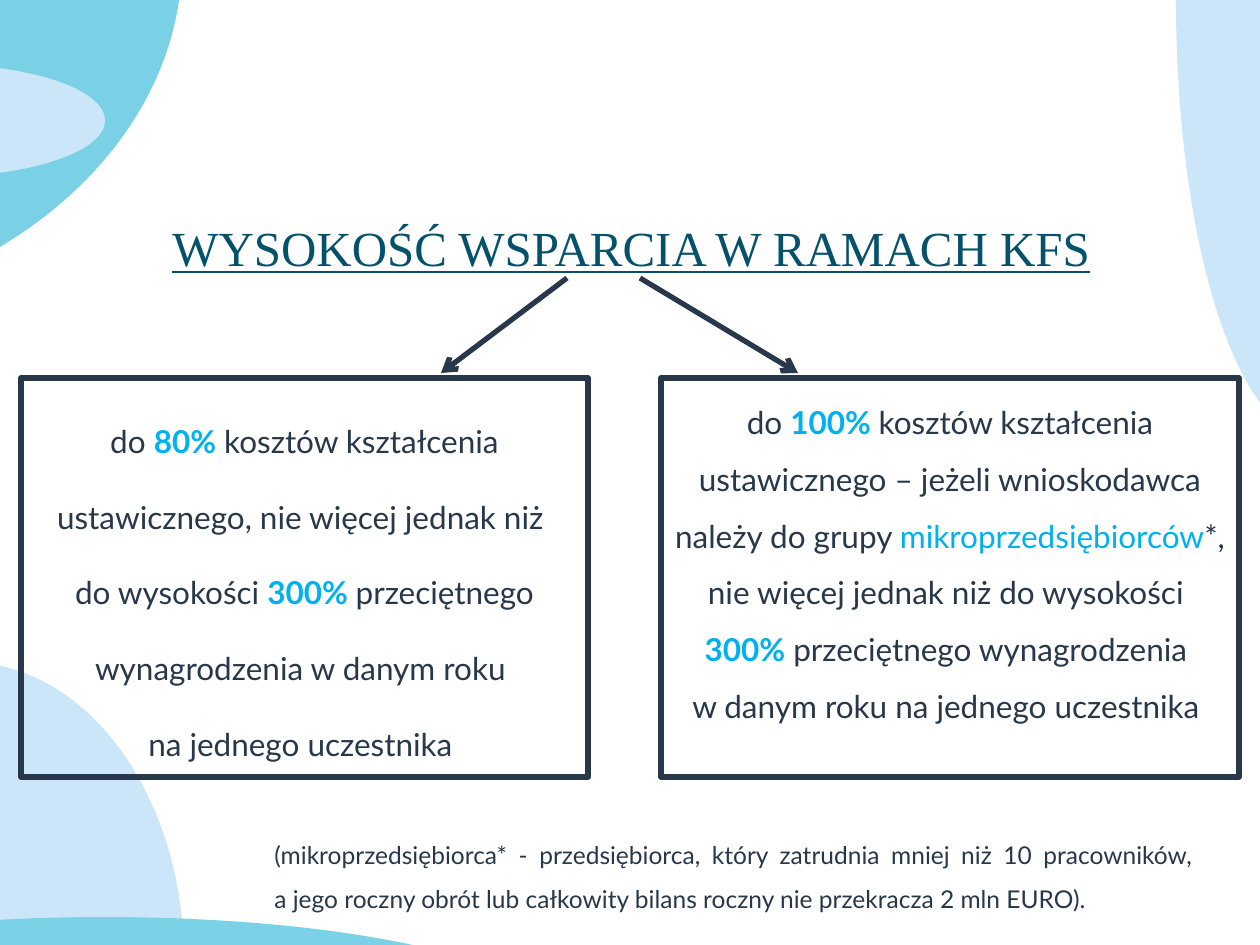
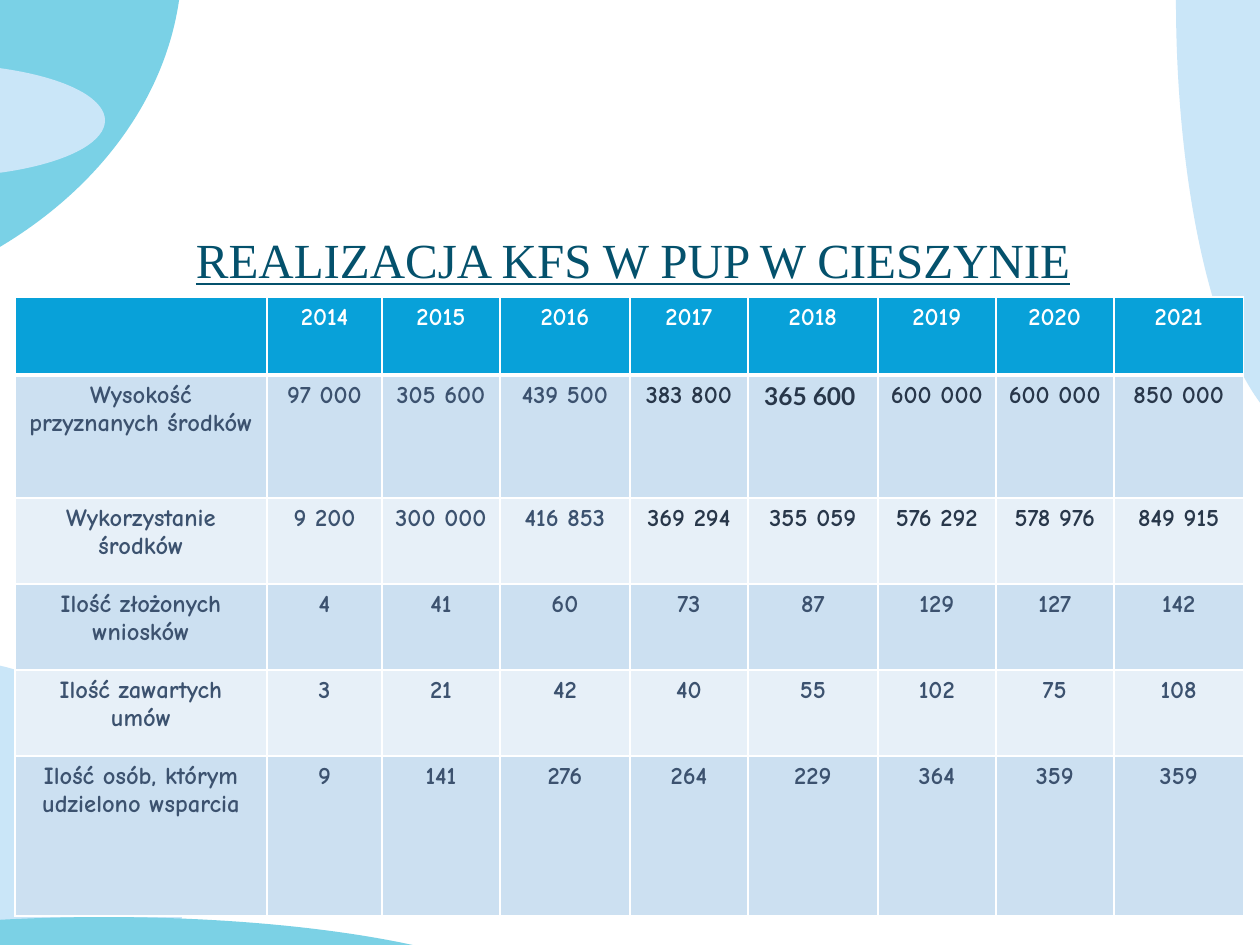
from copy import deepcopy

from lxml.etree import SubElement
from pptx import Presentation
from pptx.dml.color import RGBColor
from pptx.enum.shapes import MSO_CONNECTOR, MSO_SHAPE
from pptx.enum.text import MSO_ANCHOR, MSO_AUTO_SIZE, PP_ALIGN
from pptx.oxml.ns import qn
from pptx.util import Emu, Pt

# Shared look
COLORS = {
    "teal": "7AD1E6", "teal_bottom": "7BD1E5", "pale": "CAE6F8",
    "title": "04516C", "dark": "28374A", "muted": "3C526F", "accent": "00B0F0",
    "header": "08A1D9", "band_dark": "CCE0F1", "band_light": "E7F0F8",
    "white": "FFFFFF",
}
TITLE_FONT, BODY_FONT, TABLE_FONT = "Times New Roman", "Lato", "Comic Neue"
EMU_PER_PX = 914400 / 126
SLIDE_SIZE = (1260, 945)
TITLE_SIZE = (1134, 158)

# Master ovals: left, top, width, height, colour
OVALS = [
    (-750, -403, 932, 725, "teal"),
    (-233, 64, 338, 113, "pale"),
    (-253, 662, 437, 595, "pale"),
    (-339, 917, 886, 198, "teal_bottom"),
    (1176, -437, 275, 874, "pale"),
]

# Slide 1 content: runs are (text, colour, bold)
SUPPORT_TITLE = ("WYSOKOŚĆ WSPARCIA W RAMACH KFS", 64, 168)
SUPPORT_BOXES = [
    {"at": (21, 378, 567, 399), "spacing": 2, "runs": [
        ("do ", "dark", False),
        ("80%", "accent", True),
        (" kosztów kształcenia ustawicznego, nie więcej jednak niż \ndo wysokości ",
         "dark", False),
        ("300% ", "accent", True),
        ("przeciętnego wynagrodzenia w danym roku \nna jednego uczestnika ",
         "dark", False)]},
    {"at": (661, 378, 578, 399), "spacing": 1.5, "runs": [
        ("do ", "dark", False),
        ("100% ", "accent", True),
        ("kosztów kształcenia ustawicznego – jeżeli wnioskodawca należy do grupy ",
         "dark", False),
        ("mikroprzedsiębiorców", "accent", False),
        ("*, nie więcej jednak niż do wysokości \n", "dark", False),
        ("300%", "accent", True),
        (" przeciętnego wynagrodzenia \nw danym roku na jednego uczestnika ",
         "dark", False)]},
]
ARROWS = [(640, 278, 798, 373), (567, 278, 441, 373)]
FOOTNOTE_AT = (262, 819, 955, 96)
FOOTNOTE = ("(mikroprzedsiębiorca* - przedsiębiorca, który zatrudnia mniej niż "
            "10 pracowników, \na jego roczny obrót lub całkowity bilans roczny "
            "nie przekracza 2 mln EURO).")

# Slide 2 content
RESULTS_TITLE = ("REALIZACJA KFS W PUP W CIESZYNIE", 66, 180)
TABLE_AT = (15, 297)
COLUMN_WIDTHS = [252, 115, 118, 130, 118, 130, 118, 118, 130]
ROW_HEIGHTS = [78, 123, 86, 86, 86, 160]
RESULTS = [
    ["", "2014", "2015", "2016", "2017", "2018", "2019", "2020", "2021"],
    ["Wysokość przyznanych środków", "97 000", "305 600", "439 500", "383 800",
     "365 600 ", "600 000", "600 000", "850 000"],
    ["Wykorzystanie środków", "9 200", "300 000", "416 853", "369 294",
     "355 059", "576 292", "578 976", "849 915"],
    ["Ilość złożonych wniosków", "4", "41", "60", "73", "87", "129", "127", "142"],
    ["Ilość zawartych umów", "3", "21", "42", "40", "55", "102", "75", "108"],
    ["Ilość osób, którym udzielono wsparcia", "9", "141", "276", "264", "229",
     "364", "359", "359"],
]
MONEY_ROWS = (1, 2)
FIRST_DARK_COLUMN = 4
LATO_CELL = (1, 5)


def px(value):
    return Emu(round(value * EMU_PER_PX))


def color(name):
    return RGBColor.from_string(COLORS[name])


def place(shape, left, top, width, height):
    shape.left, shape.top = px(left), px(top)
    shape.width, shape.height = px(width), px(height)


def add_run(paragraph, text, font_name, size, color_name, bold=False):
    """Add text in one style; a newline becomes a line break of that style."""
    for index, line in enumerate(text.split("\n")):
        if index:
            paragraph.add_line_break()
            line_break = paragraph._p.findall(qn("a:br"))[-1]
            line_break.append(deepcopy(run._r.rPr))
        if line:
            run = paragraph.add_run()
            run.text = line
            run.font.name, run.font.size = font_name, Pt(size)
            run.font.bold = bold
            run.font.color.rgb = color(color_name)
    return run


def add_title(slide, text, left, top):
    title = slide.shapes.title
    place(title, left, top, *TITLE_SIZE)
    frame = title.text_frame
    frame.auto_size = MSO_AUTO_SIZE.NONE
    frame.vertical_anchor = MSO_ANCHOR.MIDDLE
    paragraph = frame.paragraphs[0]
    paragraph.alignment = PP_ALIGN.CENTER
    run = add_run(paragraph, text, TITLE_FONT, 28, "title")
    run.font.underline = True


def add_master_ovals(presentation, slide):
    """Draw the ovals on a slide, then move them behind everything on the master."""
    master_tree = presentation.slide_master.shapes.element
    for index, (left, top, width, height, fill) in enumerate(OVALS):
        oval = slide.shapes.add_shape(
            MSO_SHAPE.OVAL, px(left), px(top), px(width), px(height))
        oval.shadow.inherit = False
        oval.fill.solid()
        oval.fill.fore_color.rgb = color(fill)
        oval.line.fill.background()
        oval.element.nvSpPr.cNvPr.set("id", str(100 + index))
        master_tree.insert(2 + index, oval.element)


def fill_support_box(shape, box):
    place(shape, *box["at"])
    shape.line.color.rgb = color("dark")
    shape.line.width = Pt(3)
    frame = shape.text_frame
    frame.auto_size = MSO_AUTO_SIZE.NONE
    frame.vertical_anchor = MSO_ANCHOR.TOP
    paragraph = frame.paragraphs[0]
    properties = paragraph._p.get_or_add_pPr()
    properties.set("marL", "0")
    properties.set("indent", "0")
    SubElement(properties, qn("a:buNone"))
    paragraph.alignment = PP_ALIGN.CENTER
    paragraph.line_spacing = box["spacing"]
    paragraph.space_before = Pt(0)
    for text, color_name, bold in box["runs"]:
        add_run(paragraph, text, BODY_FONT, 18, color_name, bold)


def add_arrow(slide, *ends):
    arrow = slide.shapes.add_connector(MSO_CONNECTOR.STRAIGHT, *map(px, ends))
    arrow.line.color.rgb = color("dark")
    arrow.line.width = Pt(3)
    SubElement(arrow.line._get_or_add_ln(), qn("a:tailEnd"), type="arrow")
    SubElement(arrow.element.spPr, qn("a:effectLst"))


def add_footnote(slide):
    box = slide.shapes.add_textbox(*map(px, FOOTNOTE_AT))
    frame = box.text_frame
    frame.word_wrap = True
    frame.auto_size = MSO_AUTO_SIZE.SHAPE_TO_FIT_TEXT
    paragraph = frame.paragraphs[0]
    paragraph.alignment = PP_ALIGN.JUSTIFY
    paragraph.line_spacing = 1.5
    add_run(paragraph, FOOTNOTE, BODY_FONT, 14, "dark")


def set_borders(cell, row):
    """White grid, with a heavy rule under the header row."""
    widths = {"L": 1, "R": 1, "T": 3 if row == 1 else 1, "B": 3 if row == 0 else 1}
    properties = cell._tc.get_or_add_tcPr()
    for side, width in widths.items():
        line = SubElement(properties, qn(f"a:ln{side}"), w=str(Pt(width)))
        fill = SubElement(line, qn("a:solidFill"))
        SubElement(fill, qn("a:srgbClr"), val=COLORS["white"])


def cell_colors(row, column):
    if row == 0:
        return "header", "white"
    is_dark = row in MONEY_ROWS and column >= FIRST_DARK_COLUMN
    return ("band_dark" if row % 2 else "band_light",
            "dark" if is_dark else "muted")


def add_results_table(slide):
    size = (sum(COLUMN_WIDTHS), sum(ROW_HEIGHTS))
    table = slide.shapes.add_table(
        len(ROW_HEIGHTS), len(COLUMN_WIDTHS), *map(px, TABLE_AT + size)).table
    table.horz_banding = False
    for column, width in zip(table.columns, COLUMN_WIDTHS):
        column.width = px(width)
    for row, height in zip(table.rows, ROW_HEIGHTS):
        row.height = px(height)
    for row, values in enumerate(RESULTS):
        for column, value in enumerate(values):
            cell = table.cell(row, column)
            fill, text_color = cell_colors(row, column)
            set_borders(cell, row)
            cell.fill.solid()
            cell.fill.fore_color.rgb = color(fill)
            paragraph = cell.text_frame.paragraphs[0]
            paragraph.alignment = PP_ALIGN.CENTER
            if value:
                font = BODY_FONT if (row, column) == LATO_CELL else TABLE_FONT
                add_run(paragraph, value, font, 14, text_color, True)


def main():
    presentation = Presentation()
    presentation.slide_width, presentation.slide_height = map(px, SLIDE_SIZE)
    two_content, title_only = (presentation.slide_layouts[i] for i in (3, 5))

    # Slide 1: support levels
    support = presentation.slides.add_slide(two_content)
    add_master_ovals(presentation, support)
    add_title(support, *SUPPORT_TITLE)
    for index, box in enumerate(SUPPORT_BOXES, start=1):
        fill_support_box(support.placeholders[index], box)
    for arrow in ARROWS:
        add_arrow(support, *arrow)
    add_footnote(support)

    # Slide 2: results by year
    results = presentation.slides.add_slide(title_only)
    add_results_table(results)
    add_title(results, *RESULTS_TITLE)

    presentation.save("out.pptx")


if __name__ == "__main__":
    main()
